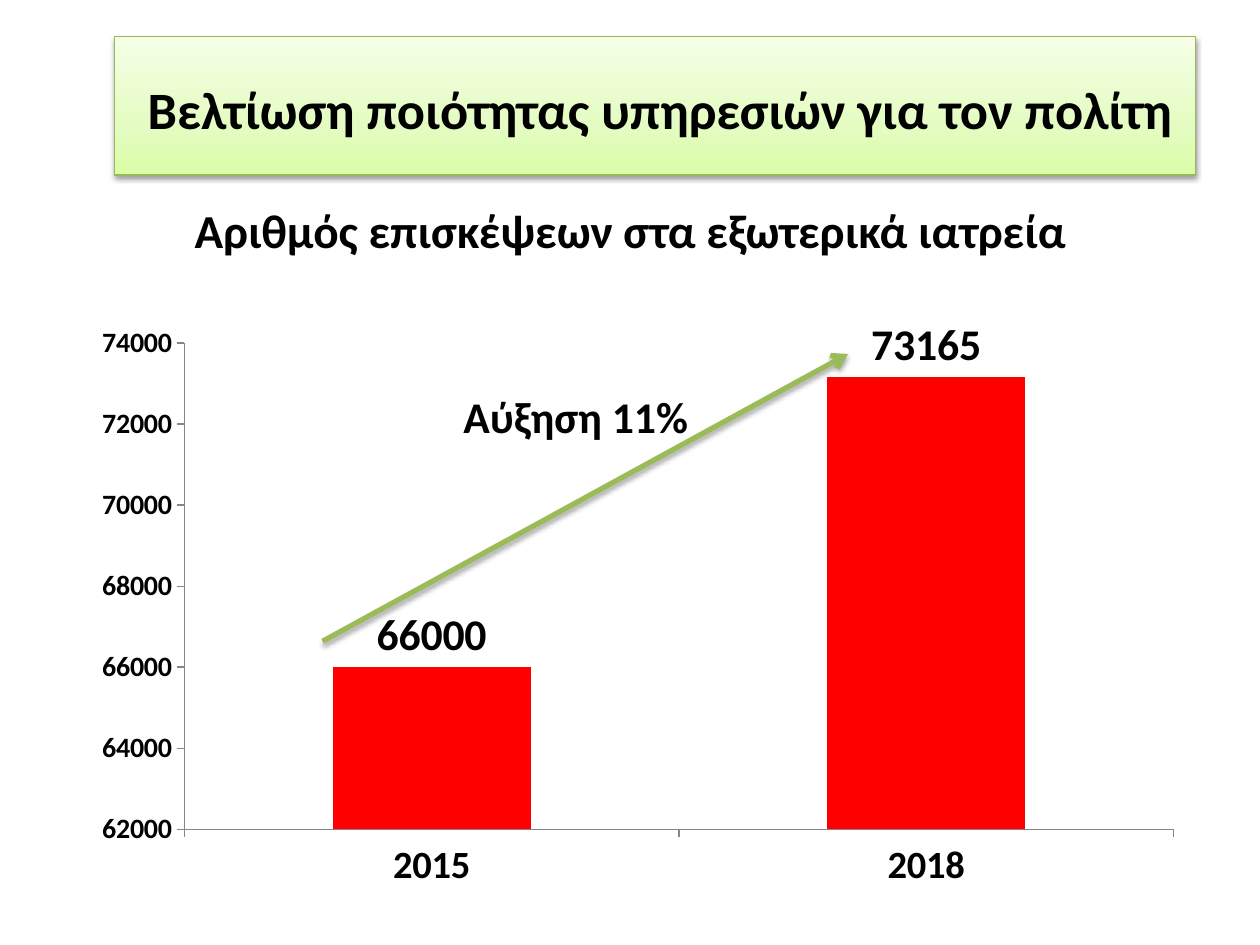
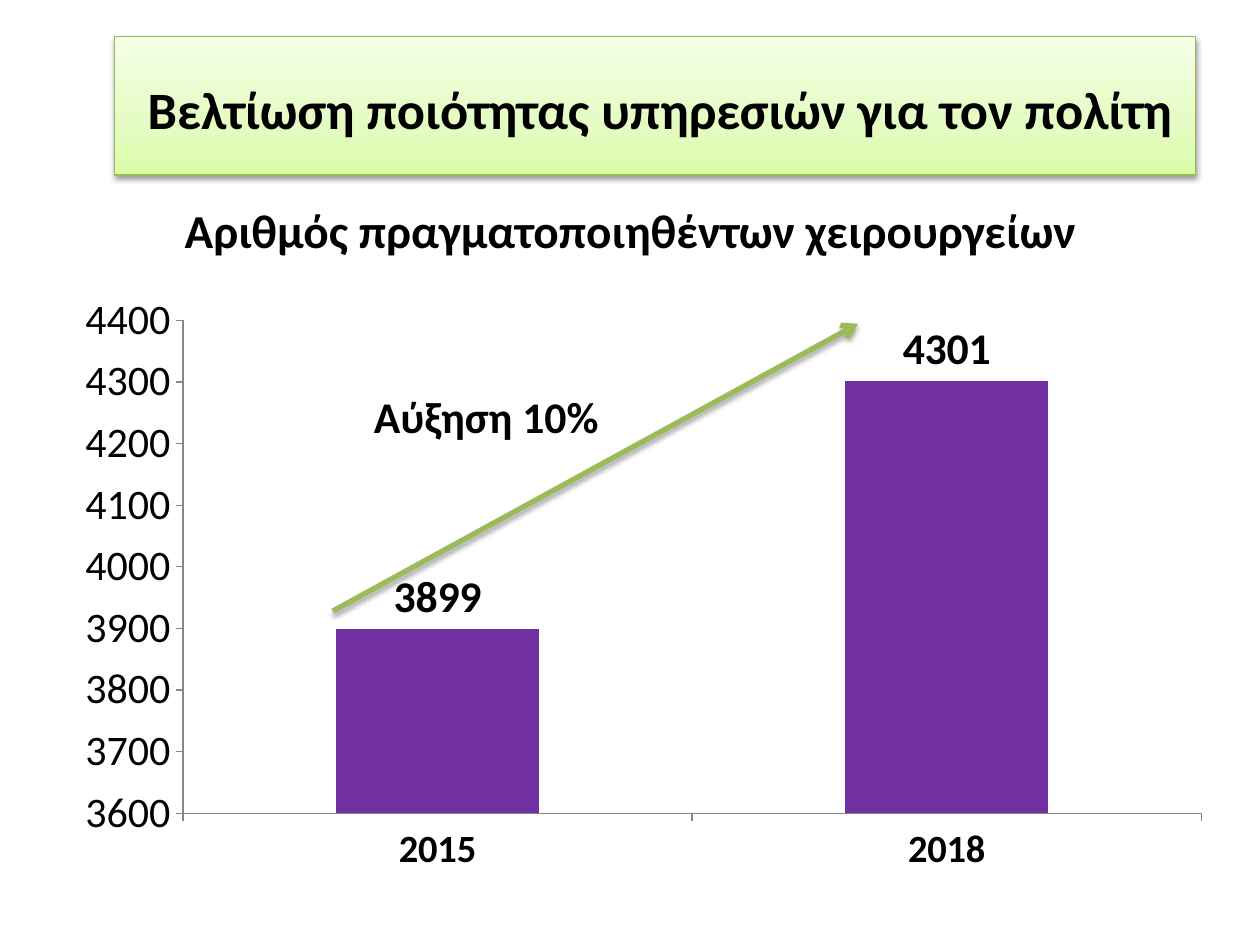
from copy import deepcopy

from lxml.etree import SubElement
from pptx import Presentation
from pptx.chart.data import CategoryChartData
from pptx.dml.color import RGBColor
from pptx.enum.chart import XL_CHART_TYPE, XL_LABEL_POSITION, XL_TICK_MARK
from pptx.enum.shapes import MSO_CONNECTOR, MSO_SHAPE
from pptx.enum.text import MSO_ANCHOR, PP_ALIGN
from pptx.oxml.ns import qn
from pptx.util import Inches, Pt

FONT = "Calibri"
COLORS = {
    "text": "000000",
    "band_line": "98B955",
    "band_bottom": "DAFDA7",
    "band_middle": "E4FCC2",
    "band_top": "F5FFE7",
    "arrow": "9BBB59",
    "axis": "868686",
    "visits": "FF0000",
    "surgeries": "7030A0",
}
TITLE = "Βελτίωση ποιότητας υπηρεσιών για τον πολίτη"
YEARS = ["2015", "2018"]


def color(name):
    return RGBColor.from_string(COLORS[name])


def style_font(font, size, bold=True):
    font.name = FONT
    font.size = Pt(size)
    font.bold = bold
    font.color.rgb = color("text")


def write_text(frame, text, *, size, align=PP_ALIGN.LEFT, anchor=MSO_ANCHOR.TOP,
               space_before=0, line_spacing=1.0, indent=0):
    frame.word_wrap = True
    frame.vertical_anchor = anchor
    paragraph = frame.paragraphs[0]
    paragraph.alignment = align
    paragraph.space_before = Pt(space_before)
    paragraph.line_spacing = line_spacing
    paragraph._p.get_or_add_pPr().set("marL", str(Inches(indent)))
    run = paragraph.add_run()
    run.text = text
    style_font(run.font, size)


def add_shadow(shape, distance, opacity):
    """Give the shape a soft black shadow that falls straight down."""
    properties = shape._element.spPr
    effects = properties.find(qn("a:effectLst"))
    if effects is None:
        effects = SubElement(properties, qn("a:effectLst"))
    shadow = SubElement(effects, qn("a:outerShdw"), blurRad=str(Pt(3.1)),
                        dist=str(Pt(distance)), dir="5400000", rotWithShape="0")
    black = SubElement(shadow, qn("a:srgbClr"), val="000000")
    SubElement(black, qn("a:alpha"), val=str(opacity * 1000))


def set_plot_area(chart, left, top, width, height):
    """Fix the inner plot area, given as fractions of the chart."""
    plot_area = chart._chartSpace.chart.plotArea
    layout = plot_area.find(qn("c:layout"))
    if layout is None:
        layout = SubElement(plot_area, qn("c:layout"))
        plot_area.insert(0, layout)
    manual = SubElement(layout, qn("c:manualLayout"))
    settings = {"layoutTarget": "inner", "xMode": "edge", "yMode": "edge",
                "x": left, "y": top, "w": width, "h": height}
    for name, value in settings.items():
        SubElement(manual, qn(f"c:{name}"), val=str(value))


class Deck:
    def __init__(self):
        self.presentation = Presentation()
        self.presentation.slide_width = Inches(10)
        self.presentation.slide_height = Inches(7.5)
        self.slide = None

    def add_slide(self, subtitle):
        layout = self.presentation.slide_layouts[6]
        self.slide = self.presentation.slides.add_slide(layout)
        self.add_title_band()
        self.add_text(subtitle, 0.83, 1.55, 8.43, 0.56, size=27, align=PP_ALIGN.CENTER)

    def add_title_band(self):
        band = self.slide.shapes.add_shape(
            MSO_SHAPE.RECTANGLE, Inches(0.91), Inches(0.29), Inches(8.58), Inches(1.1))
        band.fill.gradient()
        band.fill.gradient_angle = 90
        first_stop = band._element.spPr.find(f".//{qn('a:gs')}")
        first_stop.addnext(deepcopy(first_stop))
        stops = [(0, "band_bottom"), (0.35, "band_middle"), (1, "band_top")]
        for stop, (position, name) in zip(band.fill.gradient_stops, stops):
            stop.position = position
            stop.color.rgb = color(name)
        band.line.color.rgb = color("band_line")
        band.line.width = Pt(0.75)
        band.shadow.inherit = False
        add_shadow(band, distance=1.6, opacity=38)
        write_text(band.text_frame, TITLE, size=30, align=PP_ALIGN.CENTER,
                   anchor=MSO_ANCHOR.MIDDLE, space_before=6, line_spacing=1.1, indent=0.08)

    def add_text(self, text, left, top, width, height, **text_format):
        box = self.slide.shapes.add_textbox(
            Inches(left), Inches(top), Inches(width), Inches(height))
        write_text(box.text_frame, text, **text_format)

    def add_growth_arrow(self, left, bottom):
        arrow = self.slide.shapes.add_connector(
            MSO_CONNECTOR.STRAIGHT, Inches(left), Inches(bottom),
            Inches(left + 4.17), Inches(bottom - 2.28))
        arrow.line.color.rgb = color("arrow")
        arrow.line.width = Pt(3)
        SubElement(arrow.line._get_or_add_ln(), qn("a:tailEnd"), type="arrow")
        add_shadow(arrow, distance=1.8, opacity=35)

    def add_column_chart(self, values, fill, *, box, plot_area, scale, axis_size, axis_bold):
        data = CategoryChartData()
        data.categories = YEARS
        data.add_series("Series 1", values)
        chart = self.slide.shapes.add_chart(
            XL_CHART_TYPE.COLUMN_CLUSTERED, *map(Inches, box), data).chart
        chart.has_legend = False
        chart.has_title = False
        style_font(chart.font, axis_size, axis_bold)
        set_plot_area(chart, *plot_area)

        for axis, size, bold in ((chart.category_axis, 22, True),
                                 (chart.value_axis, axis_size, axis_bold)):
            axis.has_major_gridlines = False
            axis.major_tick_mark = XL_TICK_MARK.OUTSIDE
            axis.minor_tick_mark = XL_TICK_MARK.NONE
            axis.format.line.color.rgb = color("axis")
            axis.format.line.width = Pt(0.75)
            style_font(axis.tick_labels.font, size, bold)
        value_axis = chart.value_axis
        value_axis.minimum_scale, value_axis.maximum_scale, value_axis.major_unit = scale

        plot = chart.plots[0]
        plot.gap_width = 150
        plot.vary_by_categories = False
        series = plot.series[0]
        series.format.fill.solid()
        series.format.fill.fore_color.rgb = color(fill)
        labels = series.data_labels
        labels.show_value = True
        labels.position = XL_LABEL_POSITION.OUTSIDE_END
        style_font(labels.font, 25)


def main():
    deck = Deck()

    deck.add_slide("Αριθμός επισκέψεων στα εξωτερικά ιατρεία ")
    deck.add_column_chart(
        [66000, 73165], "visits", box=(0.67, 2.49, 8.82, 4.65),
        plot_area=(0.09, 0.05, 0.89, 0.83), scale=(62000, 74000, 2000),
        axis_size=16, axis_bold=True)
    deck.add_growth_arrow(2.56, 5.09)
    deck.add_text("Αύξηση 11%", 3.58, 3.04, 2.13, 0.52, size=25)

    deck.add_slide("Αριθμός πραγματοποιηθέντων χειρουργείων ")
    deck.add_growth_arrow(2.64, 4.85)
    deck.add_text("Αύξηση 10%", 2.87, 3.04, 2.13, 0.52, size=25)
    deck.add_column_chart(
        [3899, 4301], "surgeries", box=(0.43, 2.25, 9.29, 4.89),
        plot_area=(0.11, 0.06, 0.87, 0.8), scale=(3600, 4400, 100),
        axis_size=24, axis_bold=False)

    deck.presentation.save("out.pptx")


if __name__ == "__main__":
    main()
